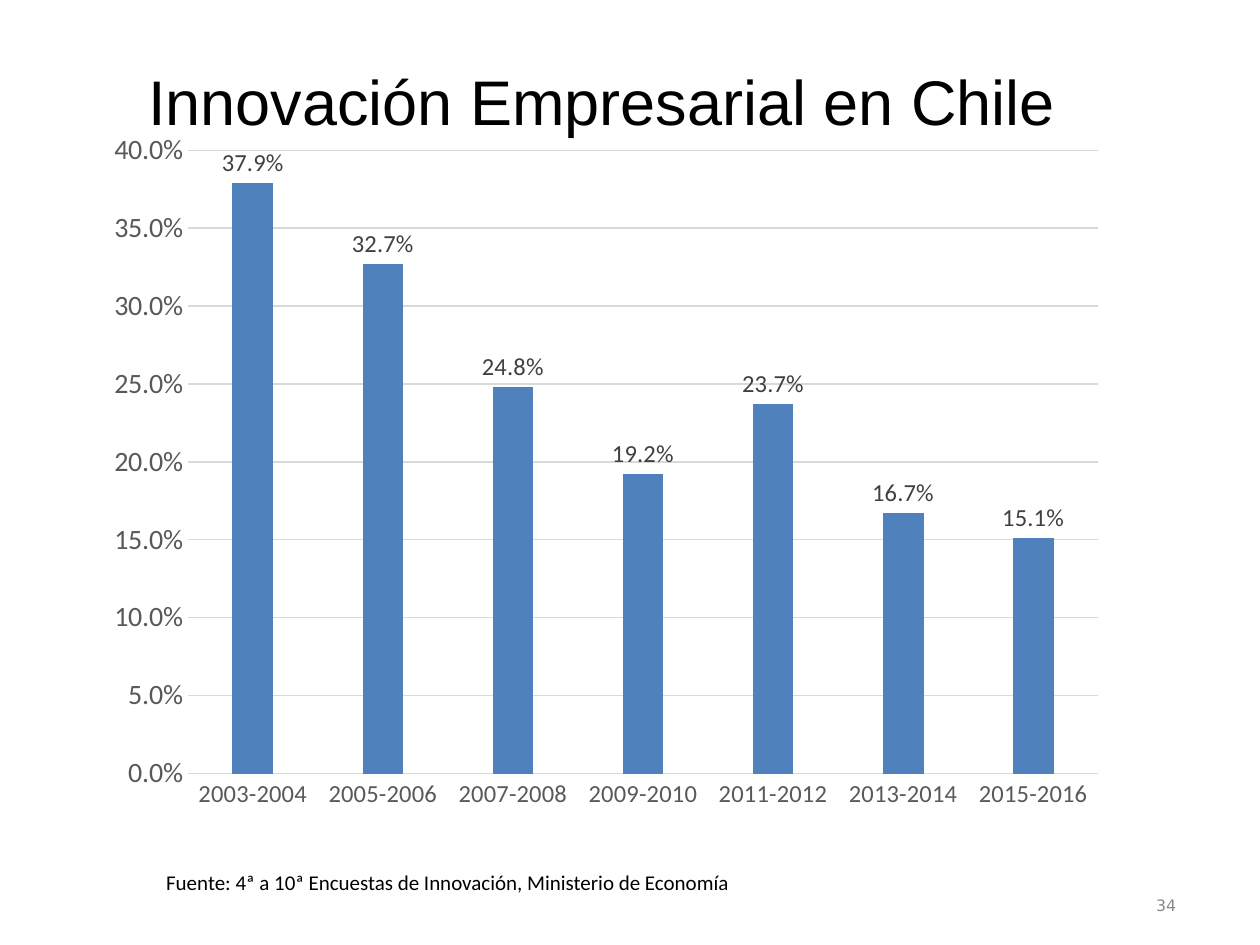
import pptx
import pptx.util
import pptx.chart.data
import pptx.dml.color
import pptx.enum.chart
import pptx.enum.text
import pptx.oxml

Inches = pptx.util.Inches
Pt = pptx.util.Pt


def color(hex_string):
    return pptx.dml.color.RGBColor.from_string(hex_string)


def style_font(font, size, hex_string, name="Calibri"):
    font.size = Pt(size)
    font.name = name
    font.color.rgb = color(hex_string)


deck = pptx.Presentation()
deck.slide_width = Inches(10)
deck.slide_height = Inches(7.5)
page = deck.slides.add_slide(deck.slide_layouts[6])

# Title, page number and source note
center = pptx.enum.text.PP_ALIGN.CENTER
left = pptx.enum.text.PP_ALIGN.LEFT
middle = pptx.enum.text.MSO_ANCHOR.MIDDLE
top = pptx.enum.text.MSO_ANCHOR.TOP
texts = [
    ("Innovación Empresarial en Chile", (0.31, 0.17, 8.93, 1.25),
     36, "000000", "Arial", center, middle, True),
    ("34", (8.86, 7.06, 0.79, 0.24),
     9, "898989", "DejaVu Sans", center, top, True),
    ("Fuente: 4ª a 10ª Encuestas de Innovación, Ministerio de Economía",
     (1.22, 6.85, 5.18, 0.3), 12, "000000", "Calibri", left, top, False),
]
for text, place, size, ink, font_name, align, anchor, wrap in texts:
    box = page.shapes.add_textbox(*map(Inches, place))
    box.text_frame.word_wrap = wrap
    box.text_frame.vertical_anchor = anchor
    para = box.text_frame.paragraphs[0]
    para.alignment = align
    span = para.add_run()
    span.text = text
    style_font(span.font, size, ink, font_name)

# Column chart
data = pptx.chart.data.CategoryChartData(number_format="0.0%")
data.categories = [f"{year}-{year + 1}" for year in range(2003, 2016, 2)]
data.add_series("Series 1", [0.379, 0.327, 0.248, 0.192, 0.237, 0.167, 0.151])
chart = page.shapes.add_chart(
    pptx.enum.chart.XL_CHART_TYPE.COLUMN_CLUSTERED,
    Inches(0.76), Inches(0.97), Inches(8.12), Inches(5.56), data).chart
chart.has_legend = False
chart.has_title = False
style_font(chart.font, 10, "000000")

plot = chart.plots[0]
plot.gap_width = 219
plot.overlap = -27
plot.vary_by_categories = False
columns = plot.series[0]
columns.format.fill.solid()
columns.format.fill.fore_color.rgb = color("4F81BD")
labels = columns.data_labels
labels.show_value = True
labels.number_format = "0.0%"
labels.number_format_is_linked = False
labels.position = pptx.enum.chart.XL_LABEL_POSITION.OUTSIDE_END
style_font(labels.font, 14, "404040")

for axis, size in ((chart.category_axis, 14), (chart.value_axis, 16)):
    axis.major_tick_mark = pptx.enum.chart.XL_TICK_MARK.NONE
    axis.minor_tick_mark = pptx.enum.chart.XL_TICK_MARK.NONE
    style_font(axis.tick_labels.font, size, "595959")

value_axis = chart.value_axis
value_axis.minimum_scale = 0
value_axis.maximum_scale = 0.4
value_axis.major_unit = 0.05
value_axis.tick_labels.number_format = "0.0%"
value_axis.tick_labels.number_format_is_linked = False
value_axis.format.line.fill.background()
value_axis.has_major_gridlines = True
for line in (chart.category_axis.format.line,
             value_axis.major_gridlines.format.line):
    line.color.rgb = color("D9D9D9")
    line.width = Pt(0.75)

# Fixed inner plot area, as fractions of the chart
plot_area = chart.element.chart.plotArea
for layout in plot_area.xpath("c:layout"):
    plot_area.remove(layout)
fractions = "".join(f'<c:{key} val="{value}"/>' for key, value in
                    (("x", 0.09), ("y", 0.04), ("w", 0.89), ("h", 0.89)))
plot_area.insert(0, pptx.oxml.parse_xml(
    '<c:layout xmlns:c="http://schemas.openxmlformats.org/drawingml/2006/chart">'
    '<c:manualLayout><c:layoutTarget val="inner"/>'
    '<c:xMode val="edge"/><c:yMode val="edge"/>'
    f'{fractions}</c:manualLayout></c:layout>'))

deck.save("out.pptx")
